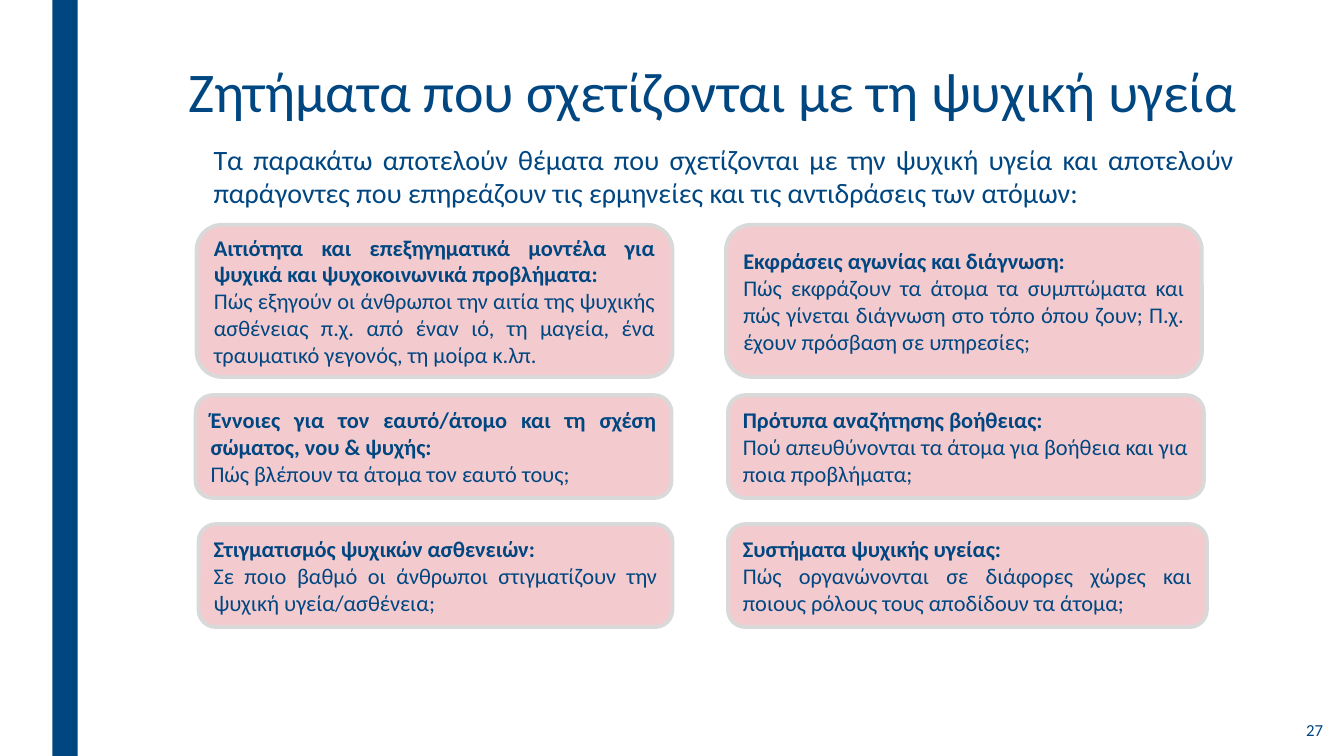
from dataclasses import dataclass
from pptx import Presentation
from pptx.dml.color import RGBColor
from pptx.enum.shapes import MSO_SHAPE
from pptx.enum.text import MSO_ANCHOR, PP_ALIGN
from pptx.util import Emu, Pt


@dataclass(frozen=True)
class Theme:
    """Colours, font and type sizes of the slide."""
    navy: str = "004680"
    pink: str = "F3CBCF"
    grey: str = "D9D9D9"
    font: str = "Calibri"
    title: int = 40
    lead: int = 20
    body: int = 16
    small: int = 12
    edge: float = 2.75


class Deck:
    """Draws styled elements on one slide, at 100 px to the inch."""

    SCALE = 9144

    def __init__(self, theme, wide, high):
        """Open a blank slide of the given size."""
        self.theme = theme
        self.prs = Presentation()
        self.prs.slide_width, self.prs.slide_height = self.emu(wide, high)
        self.slide = self.prs.slides.add_slide(self.prs.slide_layouts[6])

    def emu(self, *sizes):
        """Turn px into EMU."""
        return [Emu(size * self.SCALE) for size in sizes]

    def shape(self, kind, box, fill, edge=None):
        """Add a filled shape with an optional outline."""
        item = self.slide.shapes.add_shape(kind, *self.emu(*box))
        item.shadow.inherit = False
        item.fill.solid()
        item.fill.fore_color.rgb = RGBColor.from_string(fill)
        if edge:
            item.line.color.rgb = RGBColor.from_string(edge)
            item.line.width = Pt(self.theme.edge)
        else:
            item.line.fill.background()
        return item

    def put(self, frame, lines, size, align, anchor, space=None):
        """Fill a frame with (text, bold) lines."""
        frame.word_wrap = True
        frame.vertical_anchor = anchor
        for i, (text, bold) in enumerate(lines):
            para = frame.add_paragraph() if i else frame.paragraphs[0]
            para.alignment = align
            if space:
                para.line_spacing = space
            run = para.add_run()
            run.text = text
            run.font.name = self.theme.font
            run.font.size = Pt(size)
            run.font.bold = bold
            run.font.color.rgb = RGBColor.from_string(self.theme.navy)

    def text(self, box, words, size, align, anchor=MSO_ANCHOR.TOP, space=None):
        """Add a text box with one paragraph."""
        item = self.slide.shapes.add_textbox(*self.emu(*box))
        self.put(item.text_frame, [(words, False)], size, align, anchor, space)

    def card(self, box, head, body, align):
        """Add a rounded card with a bold heading and a body."""
        look = self.theme
        item = self.shape(MSO_SHAPE.ROUNDED_RECTANGLE, box, look.pink, look.grey)
        self.put(item.text_frame, [(head, True), (body, False)],
                 look.body, align, MSO_ANCHOR.MIDDLE)


CARDS = [
    ((195, 223, 472, 151),
     "Αιτιότητα και επεξηγηματικά μοντέλα για ψυχικά και ψυχοκοινωνικά προβλήματα:",
     "Πώς εξηγούν οι άνθρωποι την αιτία της ψυχικής ασθένειας π.χ. από έναν ιό, "
     "τη μαγεία, ένα τραυματικό γεγονός, τη μοίρα κ.λπ.", PP_ALIGN.JUSTIFY),
    ((720, 223, 472, 151),
     "Εκφράσεις αγωνίας και διάγνωση:",
     "Πώς εκφράζουν τα άτομα τα συμπτώματα και πώς γίνεται διάγνωση στο τόπο "
     "όπου ζουν; Π.χ. έχουν πρόσβαση σε υπηρεσίες;", PP_ALIGN.JUSTIFY),
    ((194, 392, 472, 102),
     "Έννοιες για τον εαυτό/άτομο και τη σχέση σώματος, νου & ψυχής:",
     "Πώς βλέπουν τα άτομα τον εαυτό τους;", PP_ALIGN.JUSTIFY),
    ((722, 392, 472, 102),
     "Πρότυπα αναζήτησης βοήθειας:",
     "Πού απευθύνονται τα άτομα για βοήθεια και για ποια προβλήματα;",
     PP_ALIGN.LEFT),
    ((197, 520, 470, 102),
     "Στιγματισμός ψυχικών ασθενειών:",
     "Σε ποιο βαθμό οι άνθρωποι στιγματίζουν την ψυχική υγεία/ασθένεια;",
     PP_ALIGN.JUSTIFY),
    ((722, 520, 475, 102),
     "Συστήματα ψυχικής υγείας:",
     "Πώς οργανώνονται σε διάφορες χώρες και ποιους ρόλους τους αποδίδουν τα άτομα;",
     PP_ALIGN.JUSTIFY),
]


def main():
    """Build and save the slide."""
    look = Theme()
    deck = Deck(look, 1333, 750)
    deck.shape(MSO_SHAPE.RECTANGLE, (52, 0, 25, 750), look.navy)
    deck.text((1147, 702, 175, 44), "27", look.small, PP_ALIGN.RIGHT,
              MSO_ANCHOR.MIDDLE)
    deck.text((177, 59, 1087, 77), "Ζητήματα που σχετίζονται με τη ψυχική υγεία",
              look.title, PP_ALIGN.LEFT, space=0.89)
    for card in CARDS:
        deck.card(*card)
    deck.text((202, 136, 1032, 77),
              "Τα παρακάτω αποτελούν θέματα που σχετίζονται με την ψυχική υγεία και "
              "αποτελούν παράγοντες που επηρεάζουν τις ερμηνείες και τις αντιδράσεις "
              "των ατόμων:", look.lead, PP_ALIGN.JUSTIFY)
    deck.prs.save("out.pptx")


if __name__ == "__main__":
    main()
